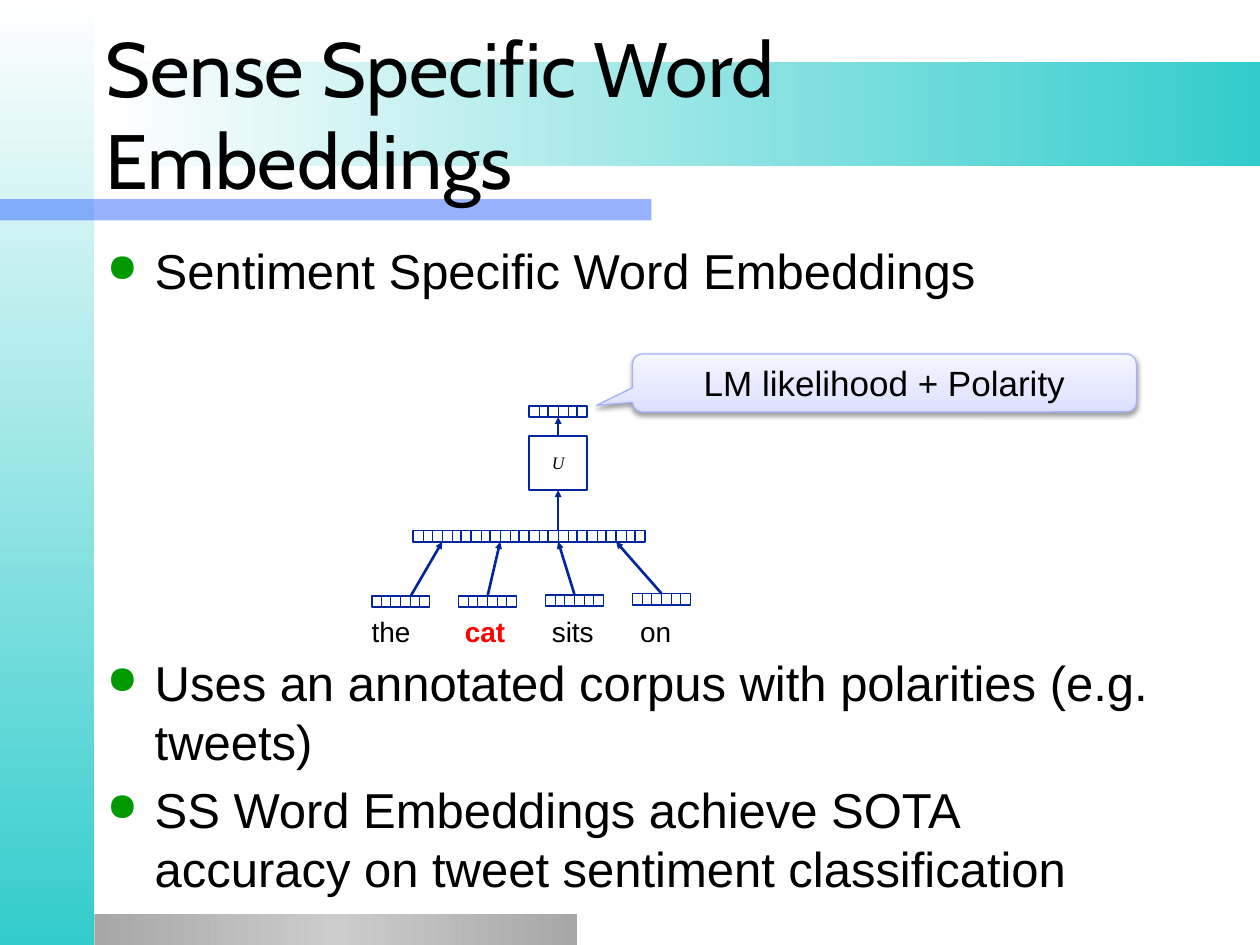
"""Build a slide on sense specific word embeddings."""
from typing import NamedTuple

from lxml.etree import SubElement
from pptx import Presentation
from pptx.dml.color import RGBColor
from pptx.enum.shapes import MSO_CONNECTOR, MSO_SHAPE
from pptx.enum.text import MSO_ANCHOR, PP_ALIGN
from pptx.oxml.ns import qn
from pptx.util import Emu, Pt

PX = 9144
NAVY, WHITE, BLACK = "002699", "FFFFFF", "000000"
STRIP_W, STRIP_H, CELLS = 46, 9, 6


class Strip(NamedTuple):
    x: int
    y: int
    fill: str | None = WHITE


class Arrow(NamedTuple):
    x1: int
    y1: int
    x2: int
    y2: int


class Band(NamedTuple):
    x: int
    y: int
    w: int
    h: int
    stops: list[tuple[int, str]]
    angle: int


class Bullet(NamedTuple):
    text: str
    before: int


BANDS = [
    Band(0, 0, 75, 750, [(0, WHITE), (100, "33CCCC")], 90),
    Band(75, 725, 383, 25, [(0, "A7A7A7"), (50, "CCCCCC"), (100, "A7A7A7")], 0),
    Band(84, 49, 916, 83, [(0, WHITE), (100, "33CCCC")], 0),
]
BULLETS = [
    Bullet("Sentiment Specific Word Embeddings", 5),
    Bullet("Uses an annotated corpus with polarities (e.g. tweets)", 202),
    Bullet("SS Word Embeddings achieve SOTA accuracy on tweet sentiment classification", 5),
]
WORD_STRIPS = [Strip(295, 473), Strip(364, 473), Strip(433, 472), Strip(502, 471)]
HIDDEN_STRIPS = [Strip(328 + STRIP_W * i, 421) for i in range(4)]
SCORE_STRIP = Strip(420, 322, None)
ARROWS = [
    Arrow(s.x + 31 if i == 0 else s.x + 23, s.y, h.x + 23, h.y + STRIP_H)
    for i, (s, h) in enumerate(zip(WORD_STRIPS, HIDDEN_STRIPS))
] + [Arrow(443, 421, 443, 389), Arrow(443, 346, 443, 331)]


def px(n: int) -> Emu:
    """Turn px into EMU."""
    return Emu(n * PX)


def rgb(color: str) -> RGBColor:
    """Turn a hex string into a colour."""
    return RGBColor.from_string(color)


def add_run(p, text: str, *, size: int, font: str = "Arial", color: str = BLACK,
            bold: bool = False, italic: bool = False) -> None:
    """Add a formatted run to a paragraph."""
    r = p.add_run()
    r.text = text
    f = r.font
    f.size, f.name, f.bold, f.italic = Pt(size), font, bold, italic
    f.color.rgb = rgb(color)


def add_box(shapes, x: int, y: int, w: int, h: int, *, fill: str | None = None,
            line: str | None = None, width: float = 1, kind=MSO_SHAPE.RECTANGLE):
    """Add a preset shape without a shadow."""
    sp = shapes.add_shape(kind, px(x), px(y), px(w), px(h))
    sp.shadow.inherit = False
    if fill:
        sp.fill.solid()
        sp.fill.fore_color.rgb = rgb(fill)
    else:
        sp.fill.background()
    if line:
        sp.line.color.rgb = rgb(line)
        sp.line.width = Pt(width)
    else:
        sp.line.fill.background()
    return sp


def add_color(parent, color: str, alpha: int = 100) -> None:
    """Append a colour element with an opacity in percent."""
    clr = SubElement(parent, qn("a:srgbClr"), val=color)
    if alpha < 100:
        SubElement(clr, qn("a:alpha"), val=str(alpha * 1000))


def set_gradient(sp, stops: list[tuple[int, str]], angle: int) -> None:
    """Fill a shape with a linear gradient, its angle running clockwise."""
    sp.fill.gradient()
    sp.fill.gradient_angle = -angle % 360
    gs_lst = sp._element.spPr.find(qn("a:gradFill")).find(qn("a:gsLst"))
    for gs in list(gs_lst):
        gs_lst.remove(gs)
    for pos, color in stops:
        add_color(SubElement(gs_lst, qn("a:gs"), pos=str(pos * 1000)), color)


def add_line(shapes, a: Arrow, width: float, head: bool = False) -> None:
    """Add a navy line, with an arrowhead at its end if asked."""
    c = shapes.add_connector(MSO_CONNECTOR.STRAIGHT, px(a.x1), px(a.y1), px(a.x2), px(a.y2))
    c.line.color.rgb = rgb(NAVY)
    c.line.width = Pt(width)
    if head:
        SubElement(c.line._get_or_add_ln(), qn("a:tailEnd"), type="triangle", w="sm", len="sm")
    SubElement(c._element.spPr, qn("a:effectLst"))


def add_strip(shapes, strip: Strip) -> None:
    """Add a vector drawn as a row of cells."""
    g = shapes.add_group_shape().shapes
    add_box(g, strip.x, strip.y, STRIP_W, STRIP_H, fill=strip.fill, line=NAVY)
    for i in range(1, CELLS):
        x = strip.x + round(STRIP_W * i / CELLS)
        add_line(g, Arrow(x, strip.y, x, strip.y + STRIP_H - 1), 0.75)


def add_text(shapes, x: int, y: int, w: int, h: int):
    """Add a wrapping text box and return its text frame."""
    tf = shapes.add_textbox(px(x), px(y), px(w), px(h)).text_frame
    tf.word_wrap = True
    return tf


def add_bullets(shapes) -> None:
    """Add the bulleted body text."""
    tf = add_text(shapes, 75, 186, 850, 528)
    for i, b in enumerate(BULLETS):
        p = tf.add_paragraph() if i else tf.paragraphs[0]
        p.space_before = Pt(b.before)
        pPr = p._p.get_or_add_pPr()
        pPr.set("marL", str(px(38)))
        pPr.set("indent", str(-px(38)))
        add_color(SubElement(pPr, qn("a:buClr")), "009900")
        SubElement(pPr, qn("a:buSzPct"), val="80000")
        SubElement(pPr, qn("a:buChar"), char="●")
        add_run(p, b.text, size=28)


def add_words(shapes) -> None:
    """Add the input words, set apart by tab stops."""
    tf = add_text(shapes, 295, 488, 260, 27)
    tf.margin_left = tf.margin_right = tf.margin_top = tf.margin_bottom = 0
    p = tf.paragraphs[0]
    tabs = SubElement(p._p.get_or_add_pPr(), qn("a:tabLst"))
    for stop in (74, 143, 213):
        SubElement(tabs, qn("a:tab"), pos=str(px(stop)), algn="l")
    add_run(p, "the\t", size=16)
    add_run(p, "cat", size=16, color="FF0000", bold=True)
    add_run(p, "\tsits\ton", size=16)


def add_callout(shapes) -> None:
    """Add the callout that names the training objective."""
    sp = add_box(shapes, 502, 281, 400, 46, line="A7B2FB", width=0.75,
                 kind=MSO_SHAPE.ROUNDED_RECTANGULAR_CALLOUT)
    for i, value in enumerate((-0.571, 0.385, 0.167)):
        sp.adjustments[i] = value
    set_gradient(sp, [(0, "DBDFFF"), (35, "E5E8FF"), (100, "F5F6FF")], 270)
    shadow = SubElement(sp._element.spPr.find(qn("a:effectLst")), qn("a:outerShdw"),
                        blurRad=str(Pt(3.1)), dist=str(Pt(1.6)), dir="5400000", rotWithShape="0")
    add_color(shadow, BLACK, 38)
    p = sp.text_frame.paragraphs[0]
    p.alignment = PP_ALIGN.CENTER
    add_run(p, "LM likelihood + Polarity", size=20)


def main() -> None:
    """Build and save the slide."""
    prs = Presentation()
    prs.slide_width, prs.slide_height = px(1000), px(750)
    shapes = prs.slides.add_slide(prs.slide_layouts[6]).shapes
    for b in BANDS:
        set_gradient(add_box(shapes, b.x, b.y, b.w, b.h), b.stops, b.angle)
    bar = add_box(shapes, 0, 158, 517, 17, fill="3366FF")
    clr = bar._element.spPr.find(qn("a:solidFill")).find(qn("a:srgbClr"))
    SubElement(clr, qn("a:alpha"), val="50000")
    tf = add_text(shapes, 74, 27, 850, 125)
    tf.vertical_anchor = MSO_ANCHOR.MIDDLE
    add_run(tf.paragraphs[0], "Sense Specific Word Embeddings", size=44, font="Cabin")
    add_bullets(shapes)
    for strip in [*WORD_STRIPS, *HIDDEN_STRIPS, SCORE_STRIP]:
        add_strip(shapes, strip)
    matrix = add_box(shapes, 420, 346, 46, 43, fill=WHITE, line=NAVY)
    p = matrix.text_frame.paragraphs[0]
    p.alignment = PP_ALIGN.CENTER
    add_run(p, "U", size=10, font="Times New Roman", italic=True)
    for arrow in ARROWS:
        add_line(shapes, arrow, 1.5, head=True)
    add_words(shapes)
    add_callout(shapes)
    prs.save("out.pptx")


if __name__ == "__main__":
    main()
